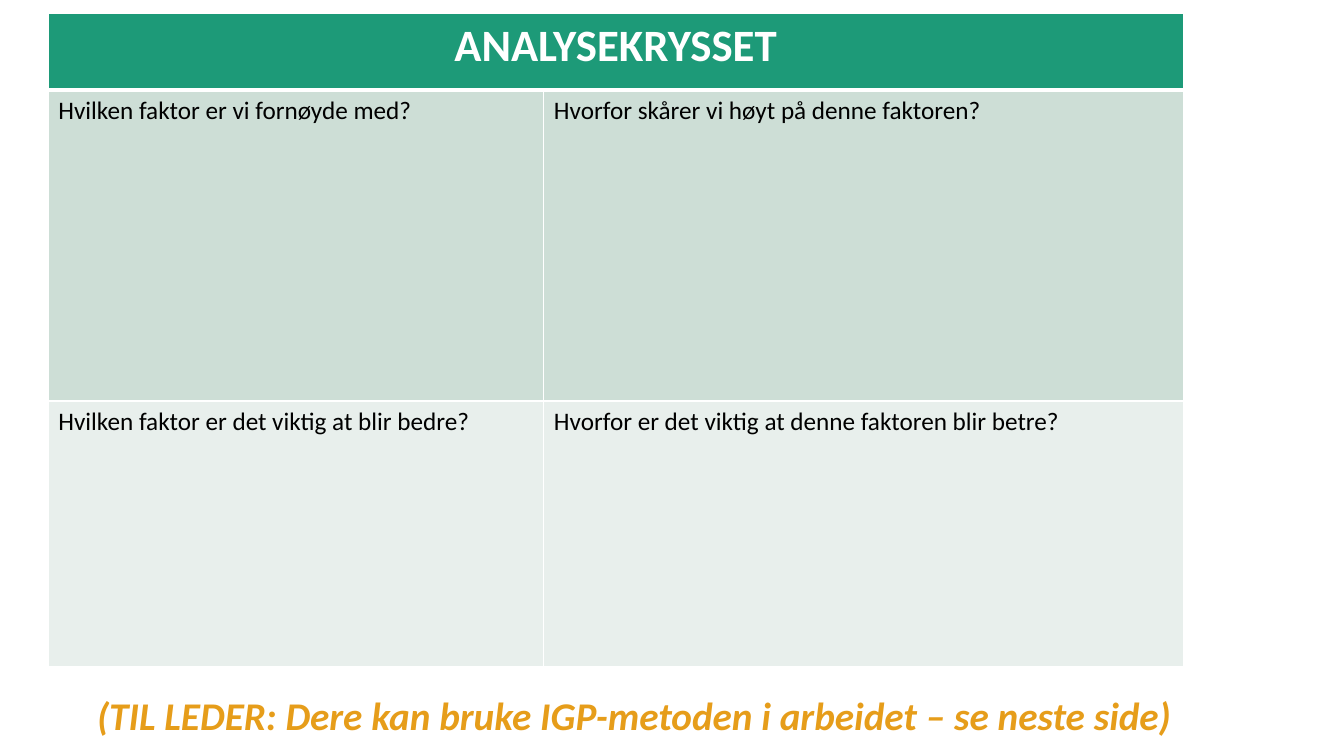
import pptx
import pptx.dml.color
import pptx.enum.text
import pptx.oxml
import pptx.oxml.ns
import pptx.util

PX = 9525  # 96 px to the inch
TITLE = "ANALYSEKRYSSET"
ROWS = [
    ("CDDED6", "Hvilken faktor er vi fornøyde med?",
     "Hvorfor skårer vi høyt på denne faktoren?"),
    ("E8EFEC", "Hvilken faktor er det viktig at blir bedre?",
     "Hvorfor er det viktig at denne faktoren blir betre?"),
]
HINT = "(TIL LEDER: Dere kan bruke IGP-metoden i arbeidet – se neste side)"


def px(*sizes):
    return [pptx.util.Emu(size * PX) for size in sizes]


def color(code):
    return pptx.dml.color.RGBColor.from_string(code)


def style(para, size, code, bold=False, italic=False):
    font = para.font
    font.name = "Calibri"
    font.size = pptx.util.Pt(size)
    font.bold = bold
    font.italic = italic
    font.color.rgb = color(code)


def edge(cell, **widths):
    """Draw white borders with widths in points for sides L, R, T and B."""
    props = cell._tc.get_or_add_tcPr()
    for side, width in widths.items():
        props.append(pptx.oxml.parse_xml(
            f'<a:ln{side} {pptx.oxml.ns.nsdecls("a")} w="{pptx.util.Pt(width)}">'
            '<a:solidFill><a:srgbClr val="FFFFFF"/></a:solidFill>'
            f'</a:ln{side}>'))


def paint(cell, fill):
    cell.fill.solid()
    cell.fill.fore_color.rgb = color(fill)


def grid(slide, box, cols, rows):
    table = slide.shapes.add_table(len(rows), len(cols), *px(*box)).table
    for col, width in zip(table.columns, px(*cols)):
        col.width = width
    for row, height in zip(table.rows, px(*rows)):
        row.height = height

    for cell in table.rows[0].cells:
        edge(cell, L=1, R=1, T=1, B=3)
        paint(cell, "1D9A78")
    head = table.cell(0, 0)
    head.merge(table.cell(0, len(cols) - 1))
    head.text = TITLE
    para = head.text_frame.paragraphs[0]
    para.alignment = pptx.enum.text.PP_ALIGN.CENTER
    style(para, 32, "FFFFFF", bold=True)

    for r, (fill, *texts) in enumerate(ROWS, 1):
        for c, text in enumerate(texts):
            cell = table.cell(r, c)
            edge(cell, L=1, R=1, T=3 if r == 1 else 1, B=1)
            paint(cell, fill)
            cell.text = text
            style(cell.text_frame.paragraphs[0], 18, "000000")


def hint(slide, box):
    frame = slide.shapes.add_textbox(*px(*box)).text_frame
    frame.word_wrap = False
    frame.auto_size = pptx.enum.text.MSO_AUTO_SIZE.SHAPE_TO_FIT_TEXT
    frame.text = HINT
    style(frame.paragraphs[0], 28, "E69D1A", bold=True, italic=True)


def main():
    deck = pptx.Presentation()
    deck.slide_width, deck.slide_height = px(1280, 720)
    slide = deck.slides.add_slide(deck.slide_layouts[6])
    cols, rows = (472, 609), (73, 296, 253)
    grid(slide, (46, 13, sum(cols), sum(rows)), cols, rows)
    hint(slide, (83, 654, 1055, 55))
    deck.save("out.pptx")


if __name__ == "__main__":
    main()
